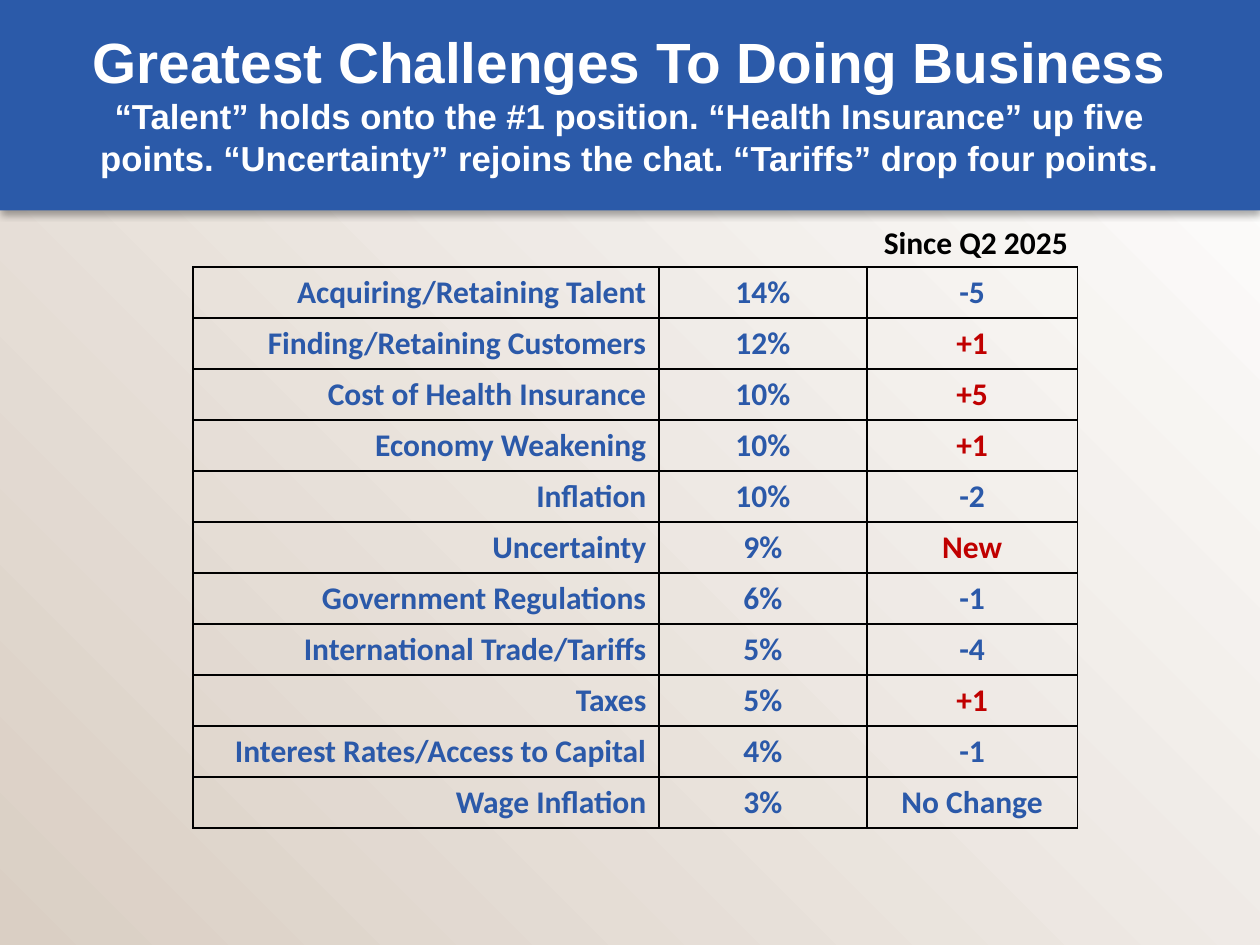
"""Build the slide ranking the greatest challenges to doing business."""
from dataclasses import dataclass
from typing import NamedTuple

from lxml import etree
from pptx import Presentation
from pptx.dml.color import RGBColor
from pptx.enum.shapes import MSO_SHAPE
from pptx.enum.text import MSO_ANCHOR, PP_ALIGN
from pptx.oxml.ns import qn
from pptx.util import Inches, Pt

RECTANGLE = MSO_SHAPE.RECTANGLE
MIDDLE = MSO_ANCHOR.MIDDLE
CENTER, RIGHT = PP_ALIGN.CENTER, PP_ALIGN.RIGHT
SLIDE_WIDTH, SLIDE_HEIGHT = Inches(10), Inches(7.5)


@dataclass(frozen=True)
class Theme:
    sand: str = "DACFC4"
    white: str = "FFFFFF"
    black: str = "000000"
    banner: str = "2B5AA9"
    entry: str = "2B59A9"
    alert: str = "C00000"
    heading_font: str = "Arial"
    body_font: str = "Calibri"
    title_size: float = 32.4
    subtitle_size: float = 19.8
    body_size: float = 18
    border_width: float = 1
    inset: float = 0.05


class Area(NamedTuple):
    """Left, top, width and height in percent of the slide's size."""
    left: float
    top: float
    width: float
    height: float

    def lengths(self) -> tuple:
        return (across(self.left), down(self.top), across(self.width), down(self.height))


class Challenge(NamedTuple):
    label: str
    share: str
    change: str
    worse: bool = False


THEME = Theme()
PAGE = Area(0, 0, 100, 100)
BANNER = Area(0, 0, 100, 22.27)
HEADING = Area(4.3, 2.53, 91.3, 16.67)
CHANGE_HEADER = Area(68.9, 22.93, 17.1, 5.33)
COLUMNS = (37, 16.5, 16.7)
ROW_HEIGHT = 5.4
TITLE = "Greatest Challenges To Doing Business"
SUBTITLE = (
    "“Talent” holds onto the #1 position. “Health Insurance” up five points. "
    "“Uncertainty” rejoins the chat. “Tariffs” drop four points."
)
CHALLENGES = (
    Challenge("Acquiring/Retaining Talent", "14%", "-5"),
    Challenge("Finding/Retaining Customers", "12%", "+1", True),
    Challenge("Cost of Health Insurance", "10%", "+5", True),
    Challenge("Economy Weakening", "10%", "+1", True),
    Challenge("Inflation", "10%", "-2"),
    Challenge("Uncertainty", "9%", "New", True),
    Challenge("Government Regulations", "6%", "-1"),
    Challenge("International Trade/Tariffs", "5%", "-4"),
    Challenge("Taxes", "5%", "+1", True),
    Challenge("Interest Rates/Access to Capital", "4%", "-1"),
    Challenge("Wage Inflation", "3%", "No Change"),
)
RANKING = Area(15.3, 28.27, sum(COLUMNS), ROW_HEIGHT * len(CHALLENGES))


def across(percent: float) -> int:
    return round(SLIDE_WIDTH * percent / 100)


def down(percent: float) -> int:
    return round(SLIDE_HEIGHT * percent / 100)


def style_font(font, name: str, color: str) -> None:
    font.name = name
    font.bold = True
    font.color.rgb = RGBColor.from_string(color)


def add_panel(slide, area: Area):
    panel = slide.shapes.add_shape(RECTANGLE, *area.lengths())
    panel.shadow.inherit = False
    panel.line.fill.background()
    return panel


def add_backdrop(slide) -> None:
    fill = add_panel(slide, PAGE).fill
    fill.gradient()
    fill.gradient_angle = 45
    for stop, color in zip(fill.gradient_stops, (THEME.sand, THEME.white)):
        stop.color.rgb = RGBColor.from_string(color)


def add_banner(slide) -> None:
    banner = add_panel(slide, BANNER)
    banner.fill.solid()
    banner.fill.fore_color.rgb = RGBColor.from_string(THEME.banner)
    effects = banner._element.spPr.find(qn("a:effectLst"))
    shadow = etree.SubElement(
        effects, qn("a:outerShdw"), blurRad=str(Pt(4)), dist=str(Pt(2.2)),
        dir="5400000", algn="t", rotWithShape="0")
    color = etree.SubElement(shadow, qn("a:srgbClr"), val=THEME.black)
    etree.SubElement(color, qn("a:alpha"), val="32000")


def add_text_area(slide, area: Area):
    frame = slide.shapes.add_textbox(*area.lengths()).text_frame
    frame.word_wrap = True
    frame.margin_left = frame.margin_right = Inches(THEME.inset)
    frame.margin_top = frame.margin_bottom = Inches(THEME.inset)
    frame.paragraphs[0].alignment = CENTER
    return frame


def add_heading(slide) -> None:
    frame = add_text_area(slide, HEADING)
    frame.vertical_anchor = MIDDLE
    heading = frame.paragraphs[0]
    style_font(heading.font, THEME.heading_font, THEME.white)
    title = heading.add_run()
    title.text = TITLE
    title.font.size = Pt(THEME.title_size)
    heading.add_line_break()
    subtitle = heading.add_run()
    subtitle.text = SUBTITLE
    subtitle.font.size = Pt(THEME.subtitle_size)


def add_change_header(slide) -> None:
    header = add_text_area(slide, CHANGE_HEADER).paragraphs[0]
    header.text = "Since Q2 2025"
    header.font.size = Pt(THEME.body_size)
    style_font(header.font, THEME.body_font, THEME.black)


def add_borders(cell) -> None:
    properties = cell._tc.get_or_add_tcPr()
    for position, side in enumerate(("a:lnL", "a:lnR", "a:lnT", "a:lnB")):
        border = etree.Element(qn(side), w=str(Pt(THEME.border_width)))
        fill = etree.SubElement(border, qn("a:solidFill"))
        etree.SubElement(fill, qn("a:srgbClr"), val=THEME.black)
        properties.insert(position, border)


def fill_cell(cell, text: str, alignment: PP_ALIGN, color: str) -> None:
    cell.fill.background()
    cell.vertical_anchor = MIDDLE
    add_borders(cell)
    entry = cell.text_frame.paragraphs[0]
    entry.text = text
    entry.alignment = alignment
    entry.font.size = Pt(THEME.body_size)
    style_font(entry.font, THEME.body_font, color)


def add_ranking(slide) -> None:
    ranking = slide.shapes.add_table(
        len(CHALLENGES), len(COLUMNS), *RANKING.lengths()).table
    ranking.first_row = ranking.horz_banding = False
    for column, width in zip(ranking.columns, COLUMNS):
        column.width = across(width)
    for row, challenge in zip(ranking.rows, CHALLENGES):
        row.height = down(ROW_HEIGHT)
        label, share, change = row.cells
        fill_cell(label, challenge.label, RIGHT, THEME.entry)
        fill_cell(share, challenge.share, CENTER, THEME.entry)
        fill_cell(change, challenge.change, CENTER,
                  THEME.alert if challenge.worse else THEME.entry)


def main() -> None:
    presentation = Presentation()
    presentation.slide_width, presentation.slide_height = SLIDE_WIDTH, SLIDE_HEIGHT
    slide = presentation.slides.add_slide(presentation.slide_layouts[6])
    add_backdrop(slide)
    add_banner(slide)
    add_heading(slide)
    add_ranking(slide)
    add_change_header(slide)
    presentation.save("out.pptx")


if __name__ == "__main__":
    main()
